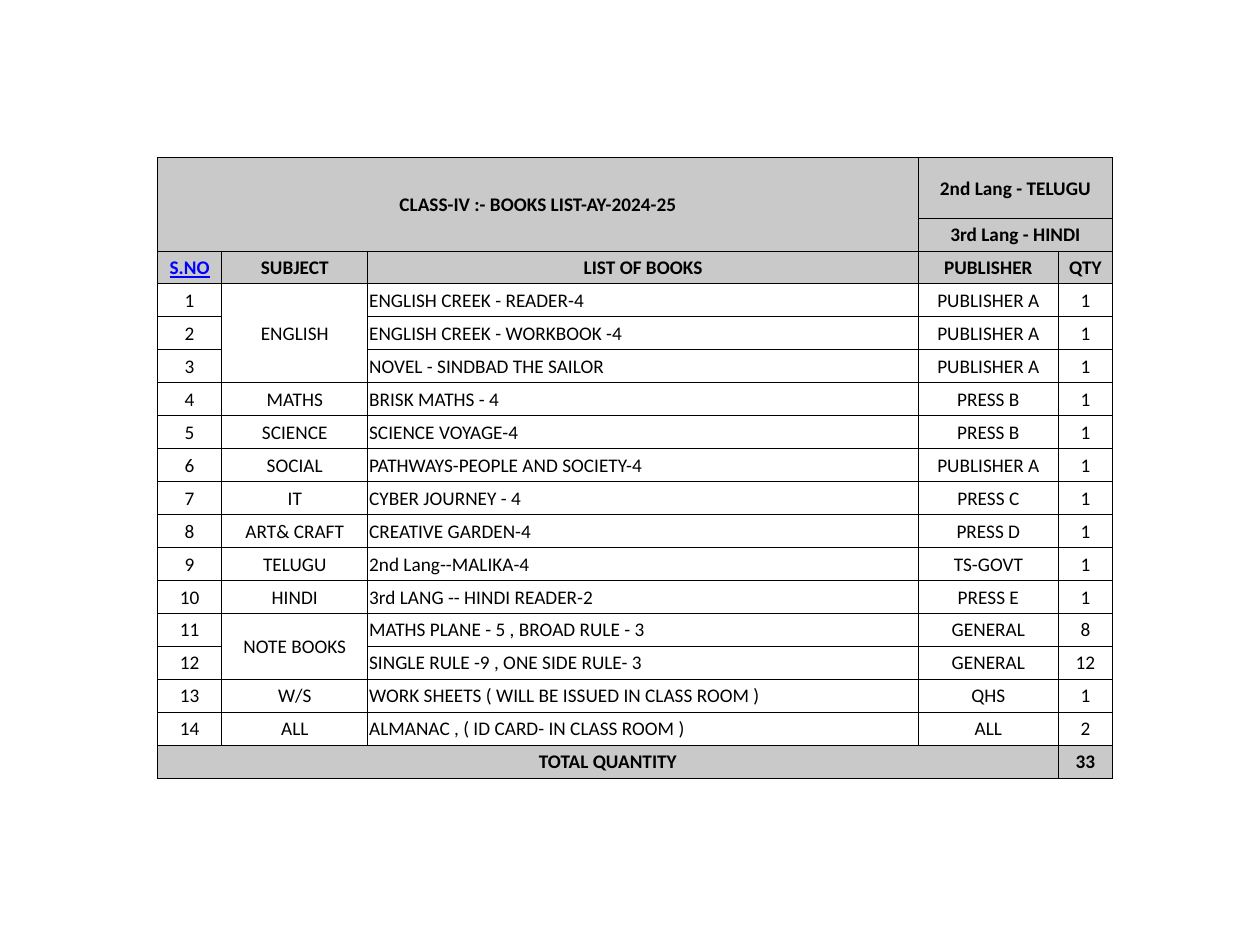
from dataclasses import dataclass

from lxml.etree import SubElement
from pptx import Presentation
from pptx.dml.color import RGBColor
from pptx.enum.text import MSO_ANCHOR, PP_ALIGN
from pptx.oxml.ns import qn
from pptx.util import Inches, Pt


@dataclass(frozen=True)
class Theme:
    font: str = "Calibri"
    size: float = 11
    border: float = 0.5
    ink: str = "000000"
    link: str = "0000FF"
    band: str = "C9C9C9"
    paper: str = "FFFFFF"


theme = Theme()

TOP, HEIGHT, FIRST_ROW = 1.25, 4.93, 0.48
COL_WIDTHS = [0.51, 1.16, 4.37, 1.11, 0.43]
LIST_COL = 2

# Subject, book, publisher, quantity; a blank subject continues the one above
BOOKS = [
    ("ENGLISH", "ENGLISH CREEK - READER-4", "PUBLISHER A", 1),
    ("", "ENGLISH CREEK - WORKBOOK -4", "PUBLISHER A", 1),
    ("", "NOVEL - SINDBAD THE SAILOR", "PUBLISHER A", 1),
    ("MATHS", "BRISK MATHS - 4", "PRESS B", 1),
    ("SCIENCE", "SCIENCE VOYAGE-4", "PRESS B", 1),
    ("SOCIAL", "PATHWAYS-PEOPLE AND SOCIETY-4", "PUBLISHER A", 1),
    ("IT", "CYBER JOURNEY - 4", "PRESS C", 1),
    ("ART& CRAFT", "CREATIVE GARDEN-4", "PRESS D", 1),
    ("TELUGU", "2nd Lang--MALIKA-4", "TS-GOVT", 1),
    ("HINDI", "3rd LANG -- HINDI READER-2", "PRESS E", 1),
    ("NOTE BOOKS", "MATHS PLANE - 5 , BROAD RULE - 3", "GENERAL", 8),
    ("", "SINGLE RULE -9 , ONE SIDE RULE- 3", "GENERAL", 12),
    ("W/S", "WORK SHEETS ( WILL BE ISSUED IN CLASS ROOM )", "QHS", 1),
    ("ALL", "ALMANAC , ( ID CARD- IN CLASS ROOM )", "ALL", 2),
]
HEADER = [
    ("CLASS-IV :- BOOKS LIST-AY-2024-25", "", "", "2nd Lang - TELUGU", ""),
    ("", "", "", "3rd Lang - HINDI", ""),
    ("S.NO", "SUBJECT", "LIST OF BOOKS", "PUBLISHER", "QTY"),
]
total = sum(qty for *_, qty in BOOKS)
rows = HEADER + [(n, *book) for n, book in enumerate(BOOKS, 1)]
rows.append(("TOTAL QUANTITY", "", "", "", total))
last = len(rows) - 1

# First and last cell of each merged area, as (row, column)
MERGES = [
    ((0, 0), (1, 2)),
    ((0, 3), (0, 4)),
    ((1, 3), (1, 4)),
    ((3, 1), (5, 1)),
    ((13, 1), (14, 1)),
    ((last, 0), (last, 3)),
]
CELL_FORMAT = {
    "vertical_anchor": MSO_ANCHOR.MIDDLE,
    "margin_left": Inches(0.01),
    "margin_right": Inches(0.01),
    "margin_top": Inches(0.01),
    "margin_bottom": 0,
}


def add_borders(cell):
    tc_pr = cell._tc.get_or_add_tcPr()
    for side in ("lnL", "lnR", "lnT", "lnB"):
        ln = SubElement(tc_pr, qn(f"a:{side}"), w=str(Pt(theme.border)))
        fill = SubElement(ln, qn("a:solidFill"))
        SubElement(fill, qn("a:srgbClr"), val=theme.ink)


prs = Presentation()
prs.slide_width, prs.slide_height = Inches(10), Inches(7.5)
s = prs.slides.add_slide(prs.slide_layouts[6])

table = s.shapes.add_table(
    len(rows), len(COL_WIDTHS), Inches(1.25), Inches(TOP),
    Inches(sum(COL_WIDTHS)), Inches(HEIGHT),
).table
table.first_row = table.horz_banding = False
for col, width in zip(table.columns, COL_WIDTHS):
    col.width = Inches(width)
for i, row in enumerate(table.rows):
    row.height = Inches(FIRST_ROW if i == 0 else (HEIGHT - FIRST_ROW) / last)

for i, values in enumerate(rows):
    is_band = i < len(HEADER) or i == last
    for j, value in enumerate(values):
        cell = table.cell(i, j)
        for name, setting in CELL_FORMAT.items():
            setattr(cell, name, setting)
        add_borders(cell)
        cell.fill.solid()
        cell.fill.fore_color.rgb = RGBColor.from_string(
            theme.band if is_band else theme.paper)

        p = cell.text_frame.paragraphs[0]
        is_book = j == LIST_COL and not is_band
        p.alignment = PP_ALIGN.LEFT if is_book else PP_ALIGN.CENTER
        if value == "":
            continue
        r = p.add_run()
        r.text = str(value)
        is_link = value == "S.NO"
        font_format = {
            "name": theme.font,
            "size": Pt(theme.size),
            "bold": is_band,
            "underline": is_link,
        }
        for name, setting in font_format.items():
            setattr(r.font, name, setting)
        r.font.color.rgb = RGBColor.from_string(
            theme.link if is_link else theme.ink)

for start, end in MERGES:
    table.cell(*start).merge(table.cell(*end))

prs.save("out.pptx")
